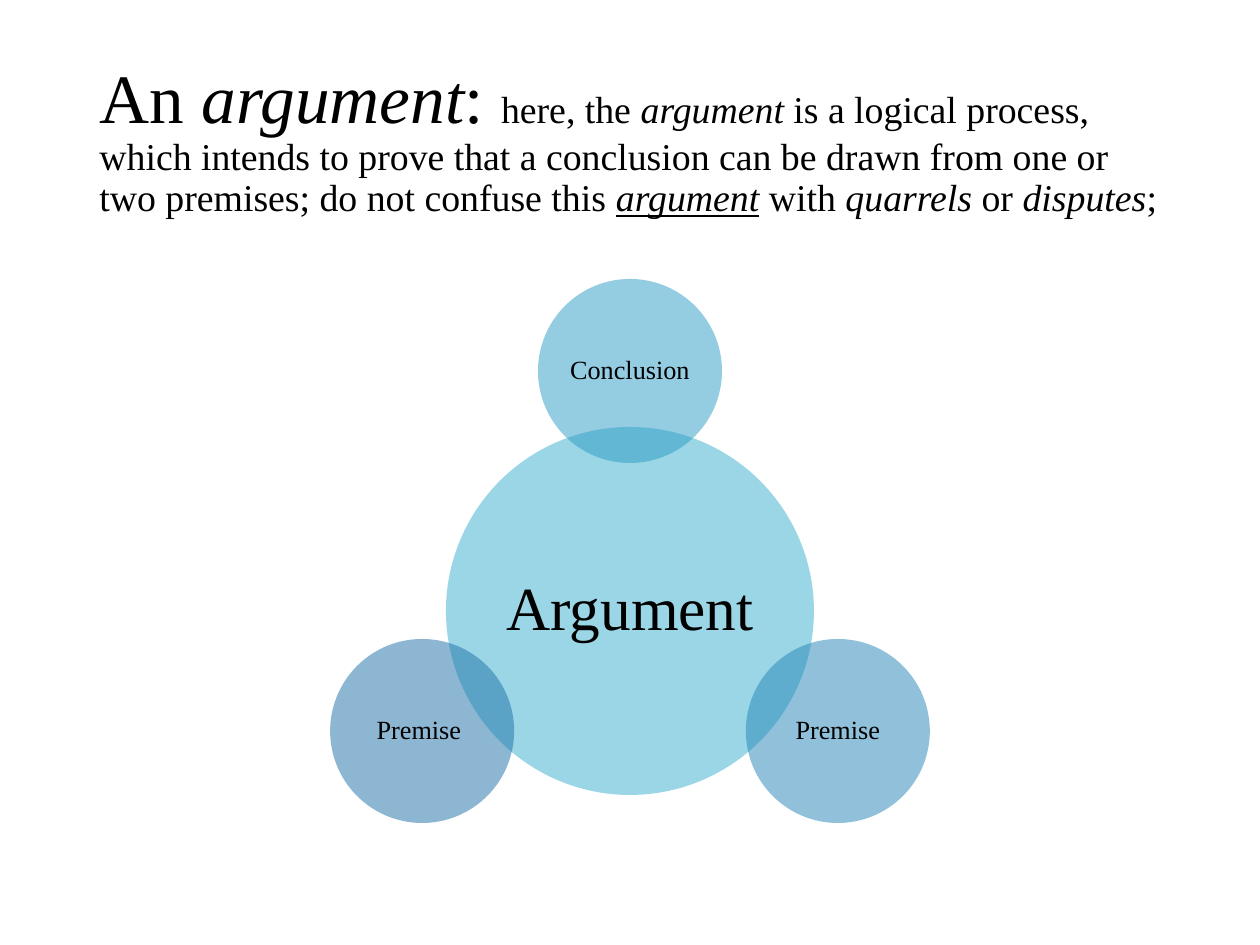
import math

import pptx
import pptx.dml.color
import pptx.enum.shapes
import pptx.enum.text
import pptx.util
from lxml import etree

PX_PER_INCH = 126
FONT = "Times New Roman"
BLACK = "000000"
TITLE_RUNS = [
    ("An ", 39.6, ""),
    ("argument", 39.6, "i"),
    (": ", 39.6, ""),
    ("here, the ", 21.6, ""),
    ("argument", 21.6, "i"),
    (" is a logical process, which intends to prove that a conclusion can be "
     "drawn from one or two premises; do not confuse this ", 21.6, ""),
    ("argument", 21.6, "iu"),
    (" with ", 21.6, ""),
    ("quarrels", 21.6, "i"),
    (" or ", 21.6, ""),
    ("disputes", 21.6, "i"),
    (";", 21.6, ""),
]
CORE = ("Argument", "36AFCE")
# Clockwise from the top; the space after the last label shifts it to the left.
SATELLITES = [("Conclusion", "2B9AC4"), ("Premise", "2484B7"), ("Premise ", "1D6FA9")]


def px(length):
    return pptx.util.Emu(round(length * 914400 / PX_PER_INCH))


def color(value):
    return pptx.dml.color.RGBColor.from_string(value)


def add_run(paragraph, text, size, style=""):
    """Add a run; style may hold i for italic and u for underline."""
    run = paragraph.add_run()
    run.text = text
    run.font.name = FONT
    run.font.size = pptx.util.Pt(size)
    run.font.color.rgb = color(BLACK)
    run.font.italic = "i" in style
    run.font.underline = "u" in style


def set_alpha(shape, percent):
    fill_color = shape.fill._xPr.find(".//" + pptx.oxml.ns.qn("a:srgbClr"))
    alpha = etree.SubElement(fill_color, pptx.oxml.ns.qn("a:alpha"))
    alpha.set("val", str(percent * 1000))


def add_title(slide, left, top, width, height):
    shape = slide.shapes.add_textbox(px(left), px(top), px(width), px(height))
    frame = shape.text_frame
    frame.word_wrap = True
    frame.vertical_anchor = pptx.enum.text.MSO_ANCHOR.MIDDLE
    paragraph = frame.paragraphs[0]
    paragraph.line_spacing = 0.9
    for text, size, style in TITLE_RUNS:
        add_run(paragraph, text, size, style)


def add_circle(slide, center_x, center_y, radius, label, fill, size, inset):
    shape = slide.shapes.add_shape(
        pptx.enum.shapes.MSO_SHAPE.OVAL,
        px(center_x - radius), px(center_y - radius), px(2 * radius), px(2 * radius))
    shape.shadow.inherit = False
    shape.fill.solid()
    shape.fill.fore_color.rgb = color(fill)
    set_alpha(shape, 50)
    shape.line.fill.background()
    frame = shape.text_frame
    frame.word_wrap = True
    frame.vertical_anchor = pptx.enum.text.MSO_ANCHOR.MIDDLE
    frame.margin_left = frame.margin_right = px(inset)
    frame.margin_top = frame.margin_bottom = px(inset)
    paragraph = frame.paragraphs[0]
    paragraph.alignment = pptx.enum.text.PP_ALIGN.CENTER
    paragraph.line_spacing = 0.9
    add_run(paragraph, label, size)


def add_radial_venn(slide, left, top, width):
    """Draw a core circle with smaller circles evenly spaced around it."""
    core_radius, radius, orbit = 184, 92, 240
    center_x = left + width / 2
    center_y = top + radius + orbit
    add_circle(slide, center_x, center_y, core_radius, *CORE, size=35, inset=6)
    for index, (label, fill) in enumerate(SATELLITES):
        angle = 2 * math.pi * index / len(SATELLITES)
        add_circle(slide, center_x + orbit * math.sin(angle),
                   center_y - orbit * math.cos(angle),
                   radius, label, fill, size=15, inset=2)


def main():
    presentation = pptx.Presentation()
    presentation.slide_width = px(1260)
    presentation.slide_height = px(945)
    slide = presentation.slides.add_slide(presentation.slide_layouts[6])
    add_title(slide, 87, 50, 1086, 183)
    add_radial_venn(slide, 330, 279, 600)
    presentation.save("out.pptx")


if __name__ == "__main__":
    main()
